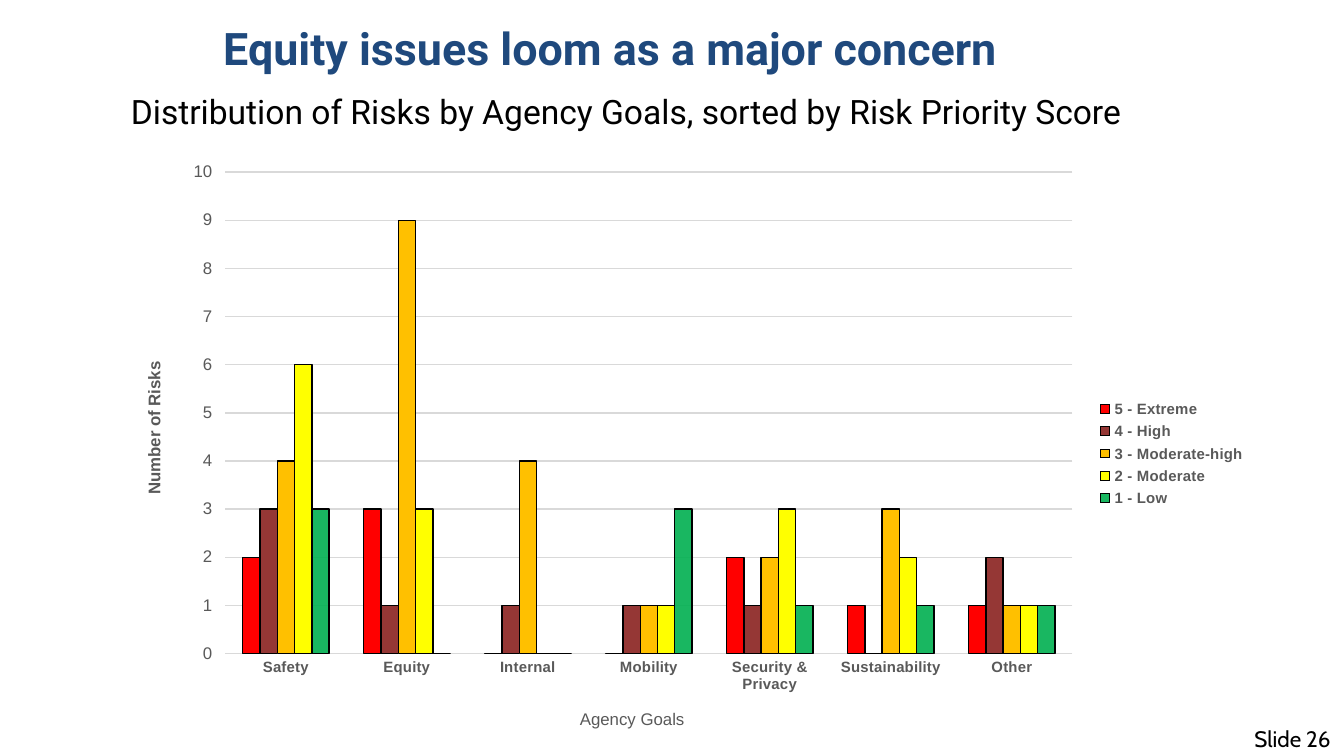
from lxml.etree import SubElement
from pptx import Presentation
from pptx.chart.data import CategoryChartData
from pptx.dml.color import RGBColor
from pptx.enum.chart import XL_CHART_TYPE as ChartType
from pptx.enum.chart import XL_LEGEND_POSITION as LegendPosition
from pptx.enum.chart import XL_TICK_MARK as TickMark
from pptx.enum.text import MSO_ANCHOR as Anchor
from pptx.enum.text import MSO_AUTO_SIZE as AutoSize
from pptx.enum.text import PP_ALIGN as Align
from pptx.oxml import parse_xml
from pptx.oxml.ns import nsdecls, qn
from pptx.util import Pt

PX = 9525  # 96 px to the inch
CHART_BOX = (84, 107, 816, 434)
COLORS = {
    "title": "1F497D",
    "text": "000000",
    "label": "595959",
    "grid": "D9D9D9",
    "outline": "000000",
    "extreme": "FF0000",
    "high": "953735",
    "moderate_high": "FFC000",
    "moderate": "FFFF00",
    "low": "00B050",
}
GOALS = ["Safety", "Equity", "Internal", "Mobility", "Security & Privacy",
         "Sustainability", "Other"]
RISKS = [
    ("5 - Extreme", "extreme", [2, 3, 0, 0, 2, 1, 1]),
    ("4 - High", "high", [3, 1, 1, 1, 1, 0, 2]),
    ("3 - Moderate-high", "moderate_high", [4, 9, 4, 1, 2, 3, 1]),
    ("2 - Moderate", "moderate", [6, 3, 0, 1, 3, 2, 1]),
    ("1 - Low", "low", [3, 0, 0, 3, 1, 1, 1]),
]


def color(name):
    return RGBColor.from_string(COLORS[name])


def to_emu(box):
    return [length * PX for length in box]


def style_font(font, name, size, color_name, bold=False):
    font.name = name
    font.size = Pt(size)
    font.bold = bold
    font.color.rgb = color(color_name)


def style_line(line, color_name):
    line.color.rgb = color(color_name)
    line.width = Pt(0.75)


def add_text(slide, box, text, font, size, color_name="text", bold=False,
             align=Align.LEFT, anchor=Anchor.TOP, wrap=True,
             auto_size=AutoSize.SHAPE_TO_FIT_TEXT):
    frame = slide.shapes.add_textbox(*to_emu(box)).text_frame
    frame.auto_size = auto_size
    frame.word_wrap = wrap
    frame.vertical_anchor = anchor
    paragraph = frame.paragraphs[0]
    paragraph.alignment = align
    run = paragraph.add_run()
    run.text = text
    style_font(run.font, font, size, color_name, bold)


def place(element, x, y, width=None, height=None):
    """Fix a chart part at px counted from the chart's corner."""
    for old in element.findall(qn("c:layout")):
        element.remove(old)
    layout = parse_xml(f"<c:layout {nsdecls('c')}/>")
    manual = SubElement(layout, qn("c:manualLayout"))
    chart_width, chart_height = CHART_BOX[2:]
    settings = [("xMode", "edge"), ("yMode", "edge"),
                ("x", x / chart_width), ("y", y / chart_height)]
    if width:
        settings += [("w", width / chart_width), ("h", height / chart_height)]
    if element.tag == qn("c:plotArea"):
        settings.insert(0, ("layoutTarget", "inner"))
    for tag, value in settings:
        SubElement(manual, qn(f"c:{tag}")).set("val", str(value))
    overlay = element.find(qn("c:overlay"))
    if overlay is None:
        element.insert(0, layout)
    else:
        overlay.addprevious(layout)


def add_axis_title(axis, text, x, y, bold=False):
    title = axis.axis_title
    run = title.text_frame.paragraphs[0].add_run()
    run.text = text
    style_font(run.font, "Arial", 9, "label", bold)
    place(title.element, x, y)


def style_axes(chart):
    goals = chart.category_axis
    goals.major_tick_mark = TickMark.NONE
    goals.minor_tick_mark = TickMark.NONE
    style_font(goals.tick_labels.font, "Arial", 8, "label", bold=True)
    style_line(goals.format.line, "grid")
    add_axis_title(goals, "Agency Goals", 328, 397)

    counts = chart.value_axis
    counts.minimum_scale, counts.maximum_scale = 0, 10
    counts.major_unit = 1
    counts.major_tick_mark = TickMark.OUTSIDE
    counts.minor_tick_mark = TickMark.NONE
    style_font(counts.tick_labels.font, "Arial", 9, "label")
    counts.format.line.fill.background()
    counts.has_major_gridlines = True
    style_line(counts.major_gridlines.format.line, "grid")
    add_axis_title(counts, "Number of Risks", 16, 149, bold=True)


def style_series(chart):
    plot = chart.plots[0]
    plot.gap_width = 200
    plot.overlap = 0
    plot.vary_by_categories = False
    for series, (_, color_name, _) in zip(plot.series, RISKS):
        series.invert_if_negative = False
        fill = series.format.fill
        fill.solid()
        fill.fore_color.rgb = color(color_name)
        style_line(series.format.line, "outline")
    low_fill = chart.element.findall(
        f".//{qn('c:ser')}/{qn('c:spPr')}/{qn('a:solidFill')}/{qn('a:srgbClr')}")[-1]
    SubElement(low_fill, qn("a:alpha")).set("val", "90000")


def add_risk_chart(slide):
    data = CategoryChartData()
    data.categories = GOALS
    for name, _, values in RISKS:
        data.add_series(name, values)
    chart = slide.shapes.add_chart(
        ChartType.COLUMN_CLUSTERED, *to_emu(CHART_BOX), data).chart
    chart.has_title = False
    style_font(chart.font, "Arial", 10, "text")
    style_series(chart)
    style_axes(chart)
    chart.has_legend = True
    chart.legend.position = LegendPosition.RIGHT
    chart.legend.include_in_layout = False
    style_font(chart.legend.font, "Arial", 8, "label", bold=True)
    place(chart.element.find(f".//{qn('c:legend')}"), 700, 175, 106, 84)
    place(chart.element.find(f".//{qn('c:plotArea')}"), 77, 16, 605, 344)


def main():
    presentation = Presentation()
    presentation.slide_width = 960 * PX
    presentation.slide_height = 540 * PX
    slide = presentation.slides.add_slide(presentation.slide_layouts[6])
    add_text(slide, (525, 513, 435, 29), "Slide 26", "Cabin", 12, align=Align.RIGHT)
    add_text(slide, (150, 0, 854, 68), "Equity issues loom as a major concern",
             "Roboto", 24, "title", bold=True, anchor=Anchor.MIDDLE,
             auto_size=AutoSize.NONE)
    add_text(slide, (84, 60, 727, 38),
             "Distribution of Risks by Agency Goals, sorted by Risk Priority Score",
             "Roboto", 18, wrap=False)
    add_risk_chart(slide)
    presentation.save("out.pptx")


if __name__ == "__main__":
    main()
